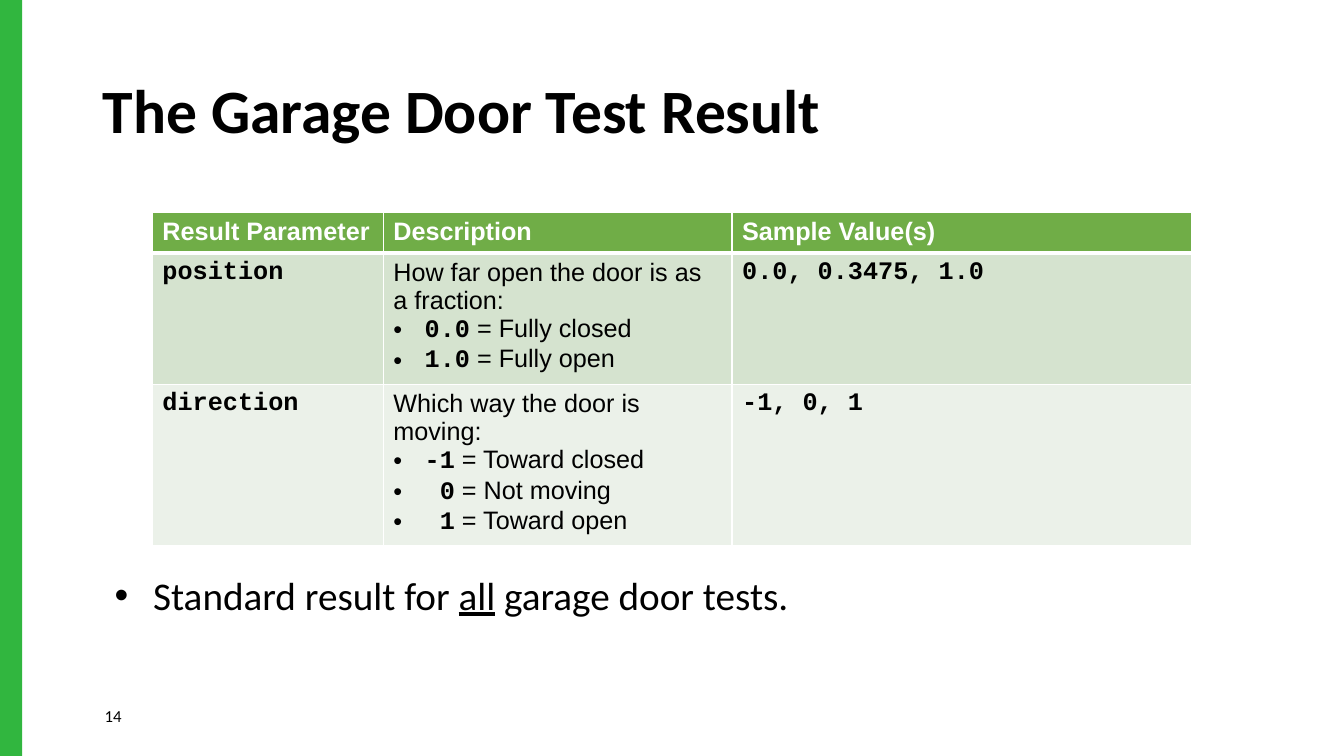
import lxml.etree
import pptx
import pptx.dml.color
import pptx.enum.shapes
import pptx.enum.text
import pptx.oxml.ns
import pptx.util

Cm = pptx.util.Cm
COLORS = {
    "bar": "31B63F",
    "header": "70AD47",
    "band_dark": "D5E3CF",
    "band_light": "EBF1E9",
    "text": "000000",
    "white": "FFFFFF",
}
CODE = {"name": "Courier New", "bold": True}
UNDERLINED = {"underline": True}


def rgb(color):
    return pptx.dml.color.RGBColor.from_string(COLORS[color])


def add_element(parent, tag, **attributes):
    return lxml.etree.SubElement(parent, pptx.oxml.ns.qn(tag), attributes)


class ResultSlide:
    """Hold the slide and its style, and draw each kind of element."""

    def __init__(self, slide):
        self.slide = slide
        self.heading_font = "Calibri"
        self.table_font = "Arial"
        self.table_size = 18

    def bar(self, left, top, width, height):
        bar = self.slide.shapes.add_shape(
            pptx.enum.shapes.MSO_SHAPE.RECTANGLE, left, top, width, height
        )
        bar.shadow.inherit = False
        bar.fill.solid()
        bar.fill.fore_color.rgb = rgb("bar")
        bar.line.fill.background()

    def paragraph(self, para, runs, size, name, color="text", bold=False, bullet=None):
        if bullet:
            left, hanging = bullet
            properties = para._p.get_or_add_pPr()
            properties.set("marL", str(Cm(left)))
            properties.set("indent", str(-Cm(hanging)))
            bullet_color = add_element(properties, "a:buClr")
            add_element(bullet_color, "a:srgbClr", val=COLORS["text"])
            add_element(properties, "a:buFont", typeface="Arial")
            add_element(properties, "a:buChar", char="•")
        para.font.name = name
        para.font.size = pptx.util.Pt(size)
        para.font.bold = bold
        para.font.color.rgb = rgb(color)
        for text, overrides in runs:
            span = para.add_run()
            span.text = text
            span.font.name = overrides.get("name")
            span.font.bold = overrides.get("bold")
            span.font.underline = overrides.get("underline")

    def text(self, left, top, width, height, runs, size, anchor="TOP",
             align="LEFT", spacing=None, **style):
        box = self.slide.shapes.add_textbox(left, top, width, height)
        frame = box.text_frame
        frame.word_wrap = True
        frame.vertical_anchor = pptx.enum.text.MSO_ANCHOR[anchor]
        para = frame.paragraphs[0]
        para.alignment = pptx.enum.text.PP_ALIGN[align]
        para.line_spacing = spacing
        self.paragraph(para, runs, size, self.heading_font, **style)

    def borders(self, cell, row):
        properties = cell._tc.get_or_add_tcPr()
        widths = {"L": 1, "R": 1, "T": 3 if row == 1 else 1, "B": 3 if row == 0 else 1}
        for side, width in widths.items():
            line = add_element(properties, f"a:ln{side}", w=str(pptx.util.Pt(width)))
            fill = add_element(line, "a:solidFill")
            add_element(fill, "a:srgbClr", val=COLORS["white"])

    def table(self, left, top, widths, heights, rows):
        table = self.slide.shapes.add_table(
            len(rows), len(widths), left, top, Cm(sum(widths)), Cm(sum(heights))
        ).table
        for column, width in zip(table.columns, widths):
            column.width = Cm(width)
        for index, (height, contents) in enumerate(zip(heights, rows)):
            table.rows[index].height = Cm(height)
            fill = ("header", "band_dark", "band_light")[index]
            for column, paragraphs in enumerate(contents):
                cell = table.cell(index, column)
                self.borders(cell, index)
                cell.fill.solid()
                cell.fill.fore_color.rgb = rgb(fill)
                self.cell_text(cell.text_frame, paragraphs, index == 0, column == 1)

    def cell_text(self, frame, paragraphs, header, described):
        code = not header and not described
        for number, runs in enumerate(paragraphs):
            para = frame.add_paragraph() if number else frame.paragraphs[0]
            self.paragraph(
                para, runs, self.table_size,
                CODE["name"] if code else self.table_font,
                color="white" if header else "text",
                bold=header or code,
                bullet=(0.79, 0.79) if number else None,
            )


def plain(text):
    return [[(text, {})]]


def described(intro, meanings):
    values = [[(value, CODE), (f" = {meaning}", {})] for value, meaning in meanings]
    return plain(intro) + values


def main():
    deck = pptx.Presentation()
    deck.slide_width = Cm(33.87)
    deck.slide_height = Cm(19.05)
    page = ResultSlide(deck.slides.add_slide(deck.slide_layouts[6]))

    page.bar(0, 0, Cm(0.56), deck.slide_height)
    page.text(Cm(2.34), Cm(1.02), Cm(29.21), Cm(3.68),
              [("The Garage Door Test Result", {})], 44,
              anchor="MIDDLE", spacing=0.9, bold=True)
    page.text(Cm(2.34), Cm(17.53), Cm(1.02), Cm(1.02), [("14", {})], 12,
              anchor="MIDDLE", align="CENTER")

    position = described("How far open the door is as a fraction:", [
        ("0.0", "Fully closed"), ("1.0", "Fully open"),
    ])
    direction = described("Which way the door is moving:", [
        ("-1", "Toward closed"), (" 0", "Not moving"), (" 1", "Toward open"),
    ])
    page.table(Cm(3.84), Cm(5.36), [5.82, 8.79, 11.58], [1.02, 3.2, 4], [
        [plain("Result Parameter"), plain("Description"), plain("Sample Value(s)")],
        [plain("position"), position, plain("0.0, 0.3475, 1.0")],
        [plain("direction"), direction, plain("-1, 0, 1")],
    ])
    page.text(Cm(2.34), Cm(14.4), Cm(29.21), Cm(2.9), [
        ("Standard result for ", {}), ("all", UNDERLINED), (" garage door tests.", {}),
    ], 28, spacing=0.9, bullet=(1.27, 0.97))

    deck.save("out.pptx")


if __name__ == "__main__":
    main()
